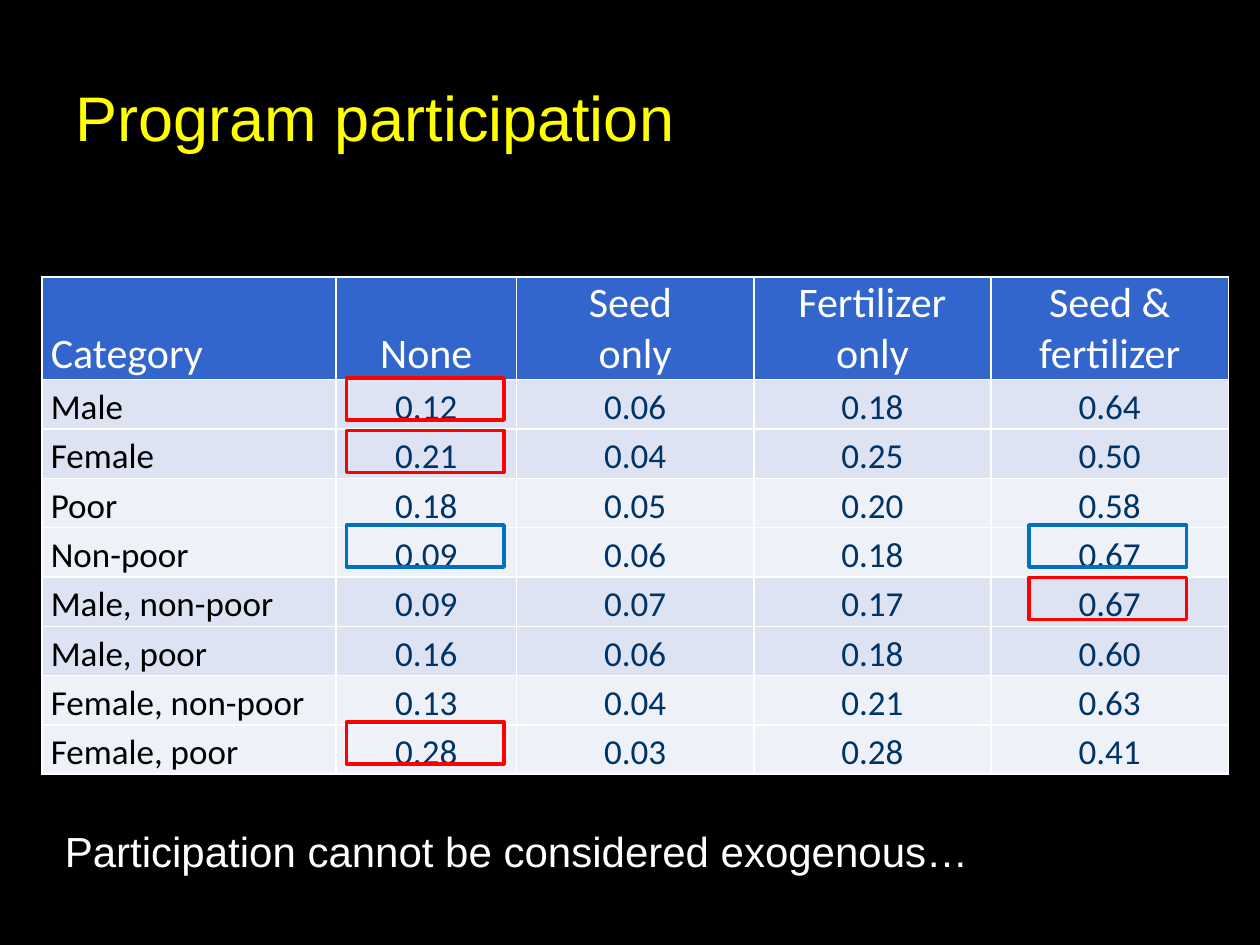
from dataclasses import dataclass

from pptx import Presentation
from pptx.dml.color import RGBColor as RGB
from pptx.enum.shapes import MSO_SHAPE as Shape
from pptx.enum.text import MSO_ANCHOR as Anchor, PP_ALIGN as Align
from pptx.oxml import parse_xml
from pptx.oxml.ns import nsdecls
from pptx.util import Emu, Inches, Pt

COLUMNS, ROWS = 120, 90  # slide grid; one unit is a twelfth of an inch


@dataclass(frozen=True)
class Theme:
    background: str = "000000"
    title: str = "FFFF00"
    light: str = "FFFFFF"
    header_fill: str = "3366CC"
    bands: tuple = ("DEE3F3", "EFF1F9")
    category: str = "000000"
    share: str = "003366"
    red: str = "FF0000"
    blue: str = "0070C0"
    font: str = "Arial"
    table_font: str = "Calibri"
    title_size: int = 36
    large: int = 24
    body: int = 20
    border: int = 1
    outline: int = 2


class SlideBuilder:
    def __init__(self, deck, theme):
        self.theme = theme
        self.column = deck.slide_width / COLUMNS
        self.row = deck.slide_height / ROWS
        self.slide = deck.slides.add_slide(deck.slide_layouts[5])
        fill = self.slide.background.fill
        fill.solid()
        fill.fore_color.rgb = RGB.from_string(theme.background)

    def area(self, left, top, width, height):
        """Turn grid units into slide lengths."""
        return (Emu(round(left * self.column)), Emu(round(top * self.row)),
                Emu(round(width * self.column)), Emu(round(height * self.row)))

    def set_text(self, frame, text, font, size, color, align=Align.LEFT, spacing=None):
        paragraph = frame.paragraphs[0]
        paragraph.text = text
        paragraph.alignment = align
        if spacing:
            paragraph.line_spacing = spacing
        for run in paragraph.runs:
            run.font.name = font
            run.font.size = Pt(size)
            run.font.bold = False
            run.font.color.rgb = RGB.from_string(color)

    def title(self, text, *place):
        title = self.slide.shapes.title
        title.left, title.top, title.width, title.height = self.area(*place)
        title.text_frame.vertical_anchor = Anchor.MIDDLE
        theme = self.theme
        self.set_text(title.text_frame, text, theme.font, theme.title_size, theme.title)

    def note(self, text, *place):
        frame = self.slide.shapes.add_textbox(*self.area(*place)).text_frame
        frame.word_wrap = True
        self.set_text(frame, text, self.theme.font, self.theme.large, self.theme.light)

    def highlight(self, color, *place):
        box = self.slide.shapes.add_shape(Shape.RECTANGLE, *self.area(*place))
        box.shadow.inherit = False
        box.fill.background()
        box.line.color.rgb = RGB.from_string(color)
        box.line.width = Pt(self.theme.outline)

    def cell(self, cell, text, fill, size, color, align, spacing):
        cell.margin_left = cell.margin_right = Inches(0.07)
        cell.margin_top = cell.margin_bottom = 0
        cell.vertical_anchor = Anchor.BOTTOM
        properties = cell._tc.get_or_add_tcPr()
        for side in "LRTB":
            properties.append(parse_xml(
                f'<a:ln{side} {nsdecls("a")} w="{Pt(self.theme.border)}"><a:solidFill>'
                f'<a:srgbClr val="{self.theme.light}"/></a:solidFill></a:ln{side}>'))
        cell.fill.solid()
        cell.fill.fore_color.rgb = RGB.from_string(fill)
        self.set_text(cell.text_frame, text, self.theme.table_font, size, color, align, spacing)

    def table(self, header, records, left, top, widths, header_height, row_height):
        theme = self.theme
        heights = [header_height] + [row_height] * len(records)
        place = self.area(left, top, sum(widths), sum(heights))
        table = self.slide.shapes.add_table(len(heights), len(widths), *place).table
        table.first_row = table.horz_banding = False
        for column, width in zip(table.columns, widths):
            column.width = Emu(round(width * self.column))
        for row, height in zip(table.rows, heights):
            row.height = Emu(round(height * self.row))
        for r, record in enumerate([header, *records]):
            for c, text in enumerate(record):
                align = Align.CENTER if c else Align.LEFT
                if r == 0:
                    style = theme.header_fill, theme.large, theme.light, align, None
                else:
                    band = theme.bands[(r - 1) // 2 % 2]  # bands are two rows deep
                    color = theme.share if c else theme.category
                    style = band, theme.body, color, align, 1.15
                self.cell(table.cell(r, c), text, *style)


HEADER = ("Category", "None", "Seed \vonly", "Fertilizer only", "Seed & fertilizer")
PARTICIPATION = (
    ("Male", "0.12", "0.06", "0.18", "0.64"),
    ("Female", "0.21", "0.04", "0.25", "0.50"),
    ("Poor", "0.18", "0.05", "0.20", "0.58"),
    ("Non-poor", "0.09", "0.06", "0.18", "0.67"),
    ("Male, non-poor", "0.09", "0.07", "0.17", "0.67"),
    ("Male, poor", "0.16", "0.06", "0.18", "0.60"),
    ("Female, non-poor", "0.13", "0.04", "0.21", "0.63"),
    ("Female, poor", "0.28", "0.03", "0.28", "0.41"),
)


def main():
    deck = Presentation()
    deck.slide_width, deck.slide_height = Inches(10), Inches(7.5)
    theme = Theme()
    page = SlideBuilder(deck, theme)

    page.title("Program participation", 6, 3.6, 108, 15)
    page.table(HEADER, PARTICIPATION, left=4, top=26.4,
               widths=(28, 17.2, 22.6, 22.6, 22.6), header_height=9.7, row_height=4.7)

    none, both = 33, 98  # left edges of the highlighted columns
    for color, left, top in (
        (theme.red, none, 68.75),
        (theme.red, none, 41),
        (theme.blue, none, 50),
        (theme.red, both, 55),
        (theme.blue, both, 50),
        (theme.red, none, 36),
    ):
        page.highlight(color, left, top, 15, 4)

    page.note("Participation cannot be considered exogenous…", 5, 78, 108, 6)
    deck.save("out.pptx")


if __name__ == "__main__":
    main()
